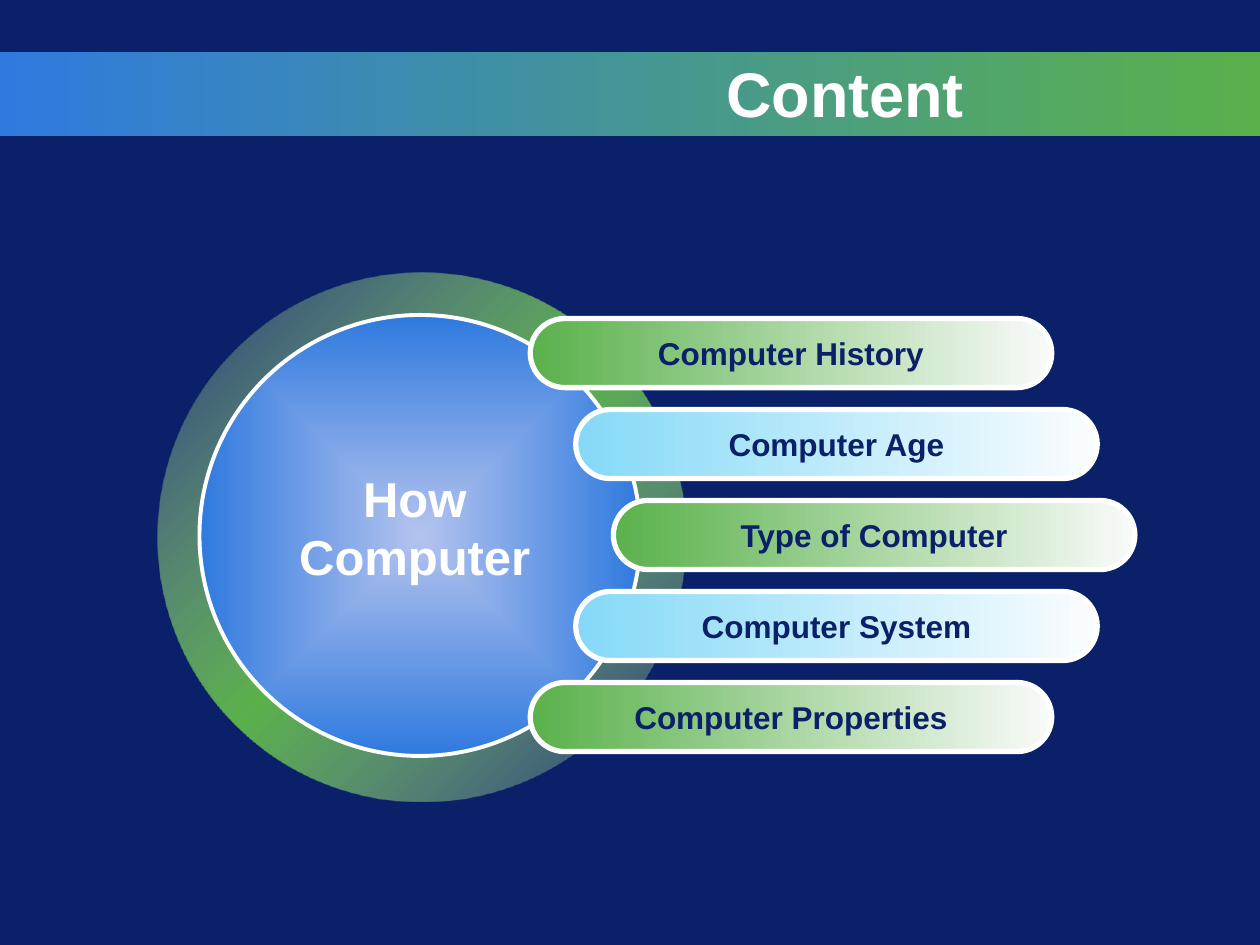
from lxml.etree import SubElement as Sub
from pptx import Presentation
from pptx.dml.color import RGBColor as RGB
from pptx.enum.shapes import MSO_SHAPE as Kind
from pptx.enum.text import MSO_ANCHOR as Anchor, PP_ALIGN as Align
from pptx.oxml import parse_xml
from pptx.oxml.ns import nsdecls, qn
from pptx.util import Pt

NAVY = RGB(0x0A, 0x20, 0x68)
BLUE = RGB(0x2F, 0x7A, 0xDF)
PALE = RGB(0xB4, 0xC3, 0xEE)
GREEN = RGB(0x5A, 0xB1, 0x4B)
MIST = RGB(0xB4, 0xD4, 0xB0)
MINT = RGB(0xF9, 0xFB, 0xF9)
SKY = RGB(0x85, 0xD9, 0xF7)
ICE = RGB(0xFA, 0xFD, 0xFF)
WHITE = RGB(0xFF, 0xFF, 0xFF)


def add_shape(kind, box, stops, angle=0, line=0):
    """Add a gradient shape; stops are (colour, opacity %), angle None means from the centre."""
    shape = slide.shapes.add_shape(kind, *map(Pt, box))
    shape.shadow.inherit = False
    shape.fill.gradient()
    grad = shape.element.spPr.find(qn("a:gradFill"))
    for child in list(grad):
        grad.remove(child)
    items = Sub(grad, qn("a:gsLst"))
    for i, (color, alpha) in enumerate(stops):
        stop = Sub(items, qn("a:gs"), pos=str(100000 * i // (len(stops) - 1)))
        tint = Sub(stop, qn("a:srgbClr"), val=str(color))
        if alpha < 100:
            Sub(tint, qn("a:alpha"), val=str(alpha * 1000))
    if angle is None:
        route = Sub(grad, qn("a:path"), path="shape")
        Sub(route, qn("a:fillToRect"), {side: "50000" for side in "ltrb"})
    else:
        Sub(grad, qn("a:lin"), ang=str(angle * 60000), scaled="0")
    if line:
        shape.line.color.rgb = WHITE
        shape.line.width = Pt(line)
    else:
        shape.line.fill.background()
    return shape


def set_text(shape, text, size, color, align, anchor, wrap=True):
    frame = shape.text_frame
    frame.word_wrap = wrap
    frame.vertical_anchor = anchor
    para = frame.paragraphs[0]
    para.alignment = align
    run = para.add_run()
    run.text = text
    for name, value in {"name": "Arial", "size": Pt(size), "bold": True}.items():
        setattr(run.font, name, value)
    run.font.color.rgb = color
    return run


deck = Presentation()
deck.slide_width, deck.slide_height = Pt(720), Pt(540)
slide = deck.slides.add_slide(deck.slide_layouts[6])
back = slide.background.fill
back.solid()
back.fore_color.rgb = NAVY

# Title band
add_shape(Kind.RECTANGLE, (0, 30, 720, 48), [(BLUE, 100), (GREEN, 100)])
title = slide.shapes.add_textbox(Pt(36), Pt(30), Pt(522), Pt(45))
set_text(title, "Content", 36, WHITE, Align.RIGHT, Anchor.MIDDLE)

# Ring and disc
ring = add_shape(Kind.DONUT, (90, 156, 302, 302),
                 [(MIST, 12), (GREEN, 100), (MIST, 12)], 45)
ring.adjustments[0] = 0.09
add_shape(Kind.OVAL, (114, 180, 252, 252), [(PALE, 100), (BLUE, 100)], None, 2.25)

# Topic pills
green, sky = [(GREEN, 100), (MINT, 100)], [(SKY, 100), (ICE, 100)]
topics = [
    ("Computer History", 303, green),
    ("Computer Age", 329, sky),
    ("Type of Computer", 350.5, green),
    ("Computer System", 329, sky),
    ("Computer Properties", 303, green),
]
for i, (topic, left, stops) in enumerate(topics):
    pill = add_shape(Kind.ROUNDED_RECTANGLE, (left, 182 + 52 * i, 298, 39.5), stops, line=3)
    pill.adjustments[0] = 0.5
    set_text(pill, topic, 18, NAVY, Align.CENTER, Anchor.MIDDLE, False)

# Disc label with a text shadow
label = slide.shapes.add_textbox(Pt(162), Pt(264), Pt(150), Pt(75))
run = set_text(label, "How Computer", 28, WHITE, Align.CENTER, Anchor.TOP)
shade = parse_xml(
    f'<a:effectLst {nsdecls("a")}><a:outerShdw dist="35921" dir="2700000">'
    '<a:srgbClr val="000000"/></a:outerShdw></a:effectLst>')
run.font.fill  # the shadow belongs right after the text fill
run.font._element.find(qn("a:solidFill")).addnext(shade)

deck.save("out.pptx")
